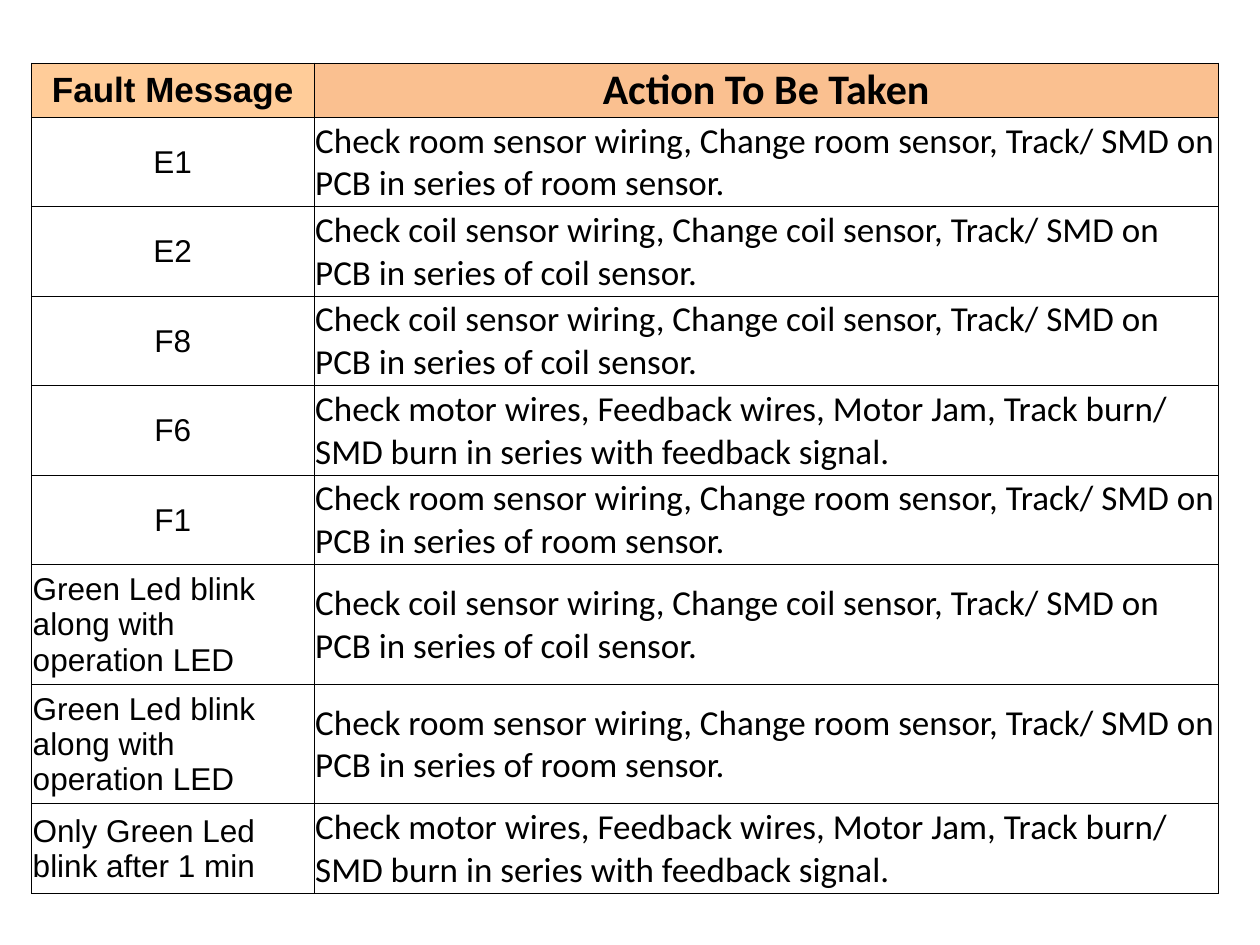
from lxml.etree import SubElement
from pptx import Presentation
from pptx.dml.color import RGBColor
from pptx.enum.text import MSO_ANCHOR, PP_ALIGN
from pptx.oxml.ns import qn
from pptx.util import Inches, Pt

BLACK = RGBColor(0x00, 0x00, 0x00)
PEACH = RGBColor(0xFF, 0xCC, 0x99)
ORANGE = RGBColor(0xFA, 0xC0, 0x90)

MESSAGE_FONT, ACTION_FONT = "Arial", "Calibri"
MESSAGE_SHARE = 0.238
HEADER_HEIGHT, TWO_LINES, THREE_LINES = 0.43, 0.71, 0.95

ROOM_SENSOR, COIL_SENSOR = (
    f"Check {name} sensor wiring, Change {name} sensor, "
    f"Track/ SMD on PCB in series of {name} sensor."
    for name in ("room", "coil")
)
MOTOR = (
    "Check motor wires, Feedback wires, Motor Jam, Track burn/ "
    "SMD burn in series with feedback signal."
)
BLINK_ALONG = "Green Led blink along with operation LED"

# message, action, message alignment, row height
FAULTS = [
    ("E1", ROOM_SENSOR, PP_ALIGN.CENTER, TWO_LINES),
    ("E2", COIL_SENSOR, PP_ALIGN.CENTER, TWO_LINES),
    ("F8", COIL_SENSOR, PP_ALIGN.CENTER, TWO_LINES),
    ("F6", MOTOR, PP_ALIGN.CENTER, TWO_LINES),
    ("F1", ROOM_SENSOR, PP_ALIGN.CENTER, TWO_LINES),
    (BLINK_ALONG, COIL_SENSOR, PP_ALIGN.LEFT, THREE_LINES),
    (BLINK_ALONG, ROOM_SENSOR, PP_ALIGN.LEFT, THREE_LINES),
    ("Only Green Led blink after 1 min", MOTOR, PP_ALIGN.LEFT, TWO_LINES),
]


def add_borders(cell):
    properties = cell._tc.get_or_add_tcPr()
    for side in ("a:lnL", "a:lnR", "a:lnT", "a:lnB"):
        line = SubElement(properties, qn(side), w=str(Pt(0.5)))
        fill = SubElement(line, qn("a:solidFill"))
        SubElement(fill, qn("a:srgbClr"), val=str(BLACK))


def fill_cell(cell, text, font_name, size, alignment, bold=False, color=None):
    cell.margin_left = cell.margin_right = cell.margin_top = Inches(0.01)
    cell.margin_bottom = 0
    cell.vertical_anchor = MSO_ANCHOR.MIDDLE
    add_borders(cell)
    if color is None:
        cell.fill.background()
    else:
        cell.fill.solid()
        cell.fill.fore_color.rgb = color

    paragraph = cell.text_frame.paragraphs[0]
    paragraph.text = text
    paragraph.alignment = alignment
    font = paragraph.runs[0].font
    font.name = font_name
    font.size = Pt(size)
    font.bold = bold
    font.color.rgb = BLACK


def add_fault_table(slide, left, top, width):
    heights = [Inches(HEADER_HEIGHT)] + [Inches(fault[3]) for fault in FAULTS]
    frame = slide.shapes.add_table(len(heights), 2, left, top, width, sum(heights))
    table = frame.table
    table.first_row = table.horz_banding = False
    table.columns[0].width = int(width * MESSAGE_SHARE)
    table.columns[1].width = width - table.columns[0].width
    for row, height in zip(table.rows, heights):
        row.height = height

    fill_cell(table.cell(0, 0), "Fault Message", MESSAGE_FONT, 20,
              PP_ALIGN.CENTER, True, PEACH)
    fill_cell(table.cell(0, 1), "Action To Be Taken", ACTION_FONT, 24,
              PP_ALIGN.CENTER, True, ORANGE)
    for index, (message, action, alignment, _) in enumerate(FAULTS, start=1):
        fill_cell(table.cell(index, 0), message, MESSAGE_FONT, 18, alignment)
        fill_cell(table.cell(index, 1), action, ACTION_FONT, 20, PP_ALIGN.LEFT)


def main():
    presentation = Presentation()
    presentation.slide_width = Inches(10)
    presentation.slide_height = Inches(7.5)
    slide = presentation.slides.add_slide(presentation.slide_layouts[6])
    add_fault_table(slide, Inches(0.25), Inches(0.5), Inches(9.42))
    presentation.save("out.pptx")


if __name__ == "__main__":
    main()
